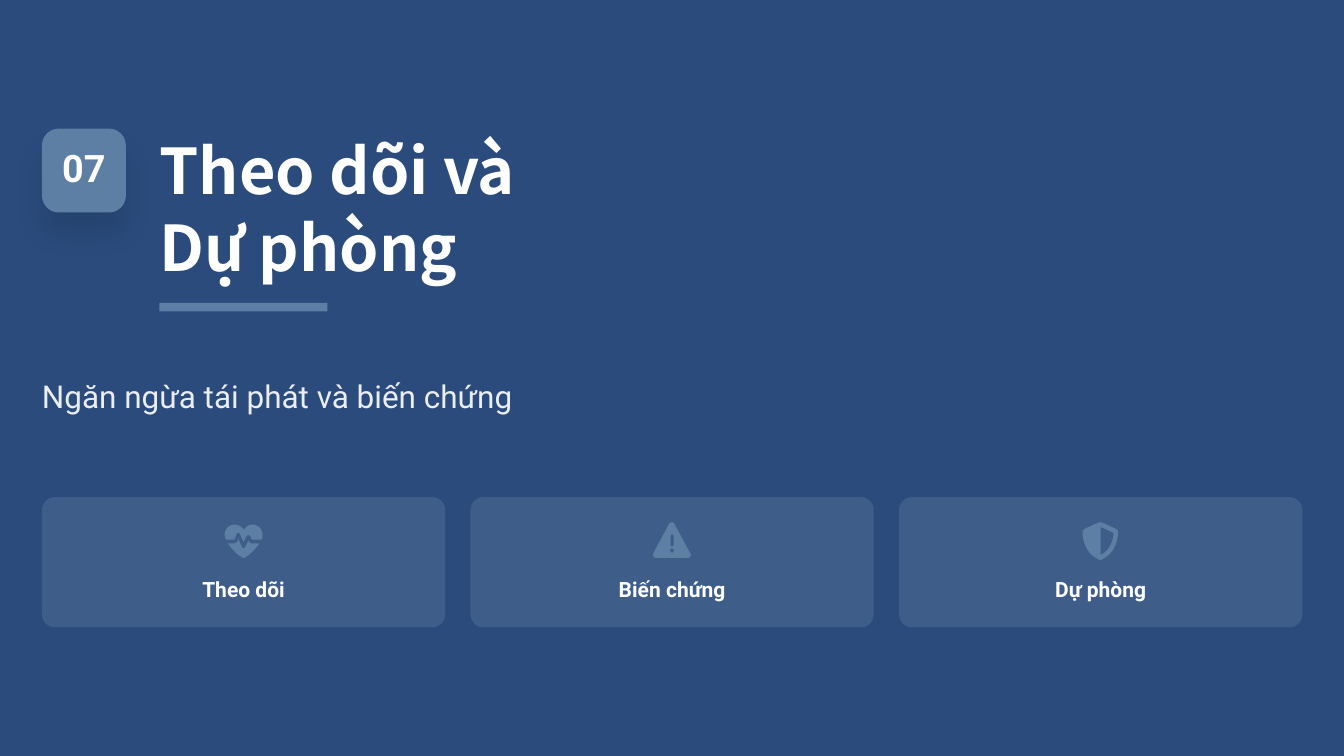
from lxml import etree
from pptx import Presentation
from pptx.dml.color import RGBColor
from pptx.enum.shapes import MSO_SHAPE
from pptx.enum.text import MSO_ANCHOR, MSO_AUTO_SIZE, PP_ALIGN
from pptx.oxml import parse_xml
from pptx.oxml.ns import nsdecls, qn
from pptx.util import Cm, Pt

ROUNDED = MSO_SHAPE.ROUNDED_RECTANGLE
RECTANGLE = MSO_SHAPE.RECTANGLE
MIDDLE = MSO_ANCHOR.MIDDLE
NO_AUTOFIT = MSO_AUTO_SIZE.NONE
LEFT, CENTER = PP_ALIGN.LEFT, PP_ALIGN.CENTER

NAVY, STEEL, WHITE = "2A4B7C", "5D7FA3", "FFFFFF"
MARGIN, GAP = 1.41, 0.85
CARD_WIDTH, CARD_HEIGHT, CARD_TOP = 13.55, 4.38, 16.7
LABEL_INSET = 0.67
ICON_SIZE, ICON_TOP = 1.27, 17.55
ICON_UNITS, PRECISION, CURVE_STEPS = 50, 100, 8

HEART = [
    [(25, 10), (24, 8), (21, 5, 17, 3, 13, 3), (6, 3, 0, 9, 0, 16), (0, 18, 1, 21, 2, 23),
     (13, 23), (16, 15), (16, 14, 17, 14, 18, 14), (19, 14, 20, 14, 20, 15), (25, 26),
     (29, 18), (30, 17, 31, 17, 31, 17), (32, 17, 33, 17, 34, 18), (36, 23), (49, 23),
     (50, 21, 50, 18, 50, 16), (50, 9, 44, 3, 37, 3), (33, 3, 29, 5, 27, 8)],
    [(46, 28), (37, 28), (34, 28, 33, 27, 32, 25), (31, 25), (27, 33),
     (27, 34, 26, 34, 25, 34), (24, 34, 23, 34, 23, 33), (18, 22), (17, 25),
     (16, 27, 14, 28, 12, 28), (4, 28), (9, 35, 16, 42, 21, 45), (22, 46, 24, 47, 25, 47),
     (27, 47, 28, 46, 29, 45), (34, 42, 41, 35, 46, 28)],
]
WARNING = [
    [(25, 0), (26, 0, 28, 1, 28, 2), (49, 41), (50, 42, 50, 44, 49, 45),
     (49, 46, 47, 47, 46, 47), (4, 47), (2, 47, 1, 46, 0, 45), (0, 44, 0, 42, 0, 41),
     (21, 2), (22, 1, 23, 0, 25, 0)],
    [(25, 16), (24, 16, 23, 17, 23, 19), (23, 29), (23, 31, 24, 32, 25, 32),
     (26, 32, 27, 31, 27, 29), (27, 19), (27, 17, 26, 16, 25, 16)],
    [(27, 37), (28, 36, 27, 35, 26, 35), (25, 34, 24, 34, 24, 35), (23, 35, 22, 36, 22, 37),
     (22, 38, 23, 39, 24, 40), (24, 40, 25, 40, 26, 40), (27, 39, 28, 38, 27, 37)],
]
SHIELD = [
    [(25, 0), (26, 0), (44, 8), (46, 9, 48, 11, 48, 13), (48, 23, 44, 41, 27, 49),
     (26, 50, 24, 50, 22, 49), (5, 41, 1, 23, 1, 13), (1, 11, 3, 9, 5, 8), (23, 0)],
    [(25, 6), (25, 43), (38, 37, 42, 22, 42, 14)],
]
CARDS = [("Theo dõi", HEART), ("Biến chứng", WARNING), ("Dự phòng", SHIELD)]


def paint(shape, colour):
    shape.shadow.inherit = False
    shape.fill.solid()
    shape.fill.fore_color.rgb = RGBColor.from_string(colour)
    shape.line.fill.background()


def write(shape, lines, size, font, bold, alignment, spacing):
    frame = shape.text_frame
    frame.word_wrap = True
    frame.auto_size = NO_AUTOFIT
    frame.vertical_anchor = MIDDLE
    frame.margin_left = frame.margin_right = frame.margin_top = frame.margin_bottom = 0
    for index, line in enumerate(lines):
        paragraph = frame.add_paragraph() if index else frame.paragraphs[0]
        paragraph.alignment = alignment
        paragraph.line_spacing = spacing
        paragraph.space_before = Pt(0)
        run = paragraph.add_run()
        run.text = line
        run.font.size = Pt(size)
        run.font.name = font
        run.font.bold = bold
        run.font.color.rgb = RGBColor.from_string(WHITE)


presentation = Presentation()
presentation.slide_width = Cm(45.16)
presentation.slide_height = Cm(25.4)
slide = presentation.slides.add_slide(presentation.slide_layouts[0])
slide.background.fill.solid()
slide.background.fill.fore_color.rgb = RGBColor.from_string(NAVY)
shapes = slide.shapes

badge = shapes.add_shape(ROUNDED, Cm(MARGIN), Cm(4.32), Cm(2.82), Cm(2.82))
badge.adjustments[0] = 0.2
paint(badge, STEEL)
effects = badge.element.spPr.find(qn("a:effectLst"))
effects.append(parse_xml(
    f'<a:outerShdw {nsdecls("a")} blurRad="{Pt(25)}" dist="{Pt(20)}" dir="5400000" '
    'algn="ctr" rotWithShape="0"><a:srgbClr val="000000"><a:alpha val="10000"/>'
    '</a:srgbClr></a:outerShdw>'))
write(badge, ["07"], 36, "Roboto", True, CENTER, 0.9)

title = shapes.title
title.left, title.top, title.width, title.height = Cm(5.36), Cm(4.32), Cm(12.8), Cm(5.28)
write(title, ["Theo dõi và", "Dự phòng"], 60, "Noto Sans CJK SC", True, LEFT, Pt(73))

underline = shapes.add_shape(RECTANGLE, Cm(5.36), Cm(10.18), Cm(5.64), Cm(0.28))
paint(underline, STEEL)

subtitle = slide.placeholders[1]
subtitle.left, subtitle.top = Cm(MARGIN), Cm(12.17)
subtitle.width, subtitle.height = Cm(32.13), Cm(1.73)
write(subtitle, ["Ngăn ngừa tái phát và biến chứng"], 30, "Roboto", False, LEFT, 1.4)
translucent = [(subtitle, 90)]

for column, (label, contours) in enumerate(CARDS):
    left = MARGIN + column * (CARD_WIDTH + GAP)
    card = shapes.add_shape(ROUNDED, Cm(left), Cm(CARD_TOP), Cm(CARD_WIDTH), Cm(CARD_HEIGHT))
    card.adjustments[0] = 0.1
    paint(card, WHITE)
    translucent.append((card, 10))

    builder = None
    for contour in contours:
        x, y = contour[0]
        points = []
        for segment in contour[1:]:
            if len(segment) == 2:
                points.append(segment)
            else:
                x1, y1, x2, y2, x3, y3 = segment
                for step in range(1, CURVE_STEPS + 1):
                    t = step / CURVE_STEPS
                    a, b, c, d = (1 - t) ** 3, 3 * t * (1 - t) ** 2, 3 * t * t * (1 - t), t ** 3
                    points.append((a * x + b * x1 + c * x2 + d * x3,
                                   a * y + b * y1 + c * y2 + d * y3))
            x, y = segment[-2:]
        start_x, start_y = (value * PRECISION for value in contour[0])
        if builder is None:
            scale = Cm(ICON_SIZE) / (ICON_UNITS * PRECISION)
            builder = shapes.build_freeform(start_x, start_y, scale)
        else:
            builder.move_to(start_x, start_y)
        builder.add_line_segments([(px * PRECISION, py * PRECISION) for px, py in points])
    icon_left = left + (CARD_WIDTH - ICON_SIZE) / 2
    icon = builder.convert_to_shape(Cm(icon_left), Cm(ICON_TOP))
    paint(icon, STEEL)

    caption = shapes.add_textbox(Cm(left + LABEL_INSET), Cm(19.23),
                                 Cm(CARD_WIDTH - 2 * LABEL_INSET), Cm(0.99))
    write(caption, [label], 20, "Roboto", True, CENTER, 1.2)

for shape, opacity in translucent:
    for colour in shape.element.iter(qn("a:srgbClr")):
        etree.SubElement(colour, qn("a:alpha")).set("val", str(opacity * 1000))

presentation.save("out.pptx")
